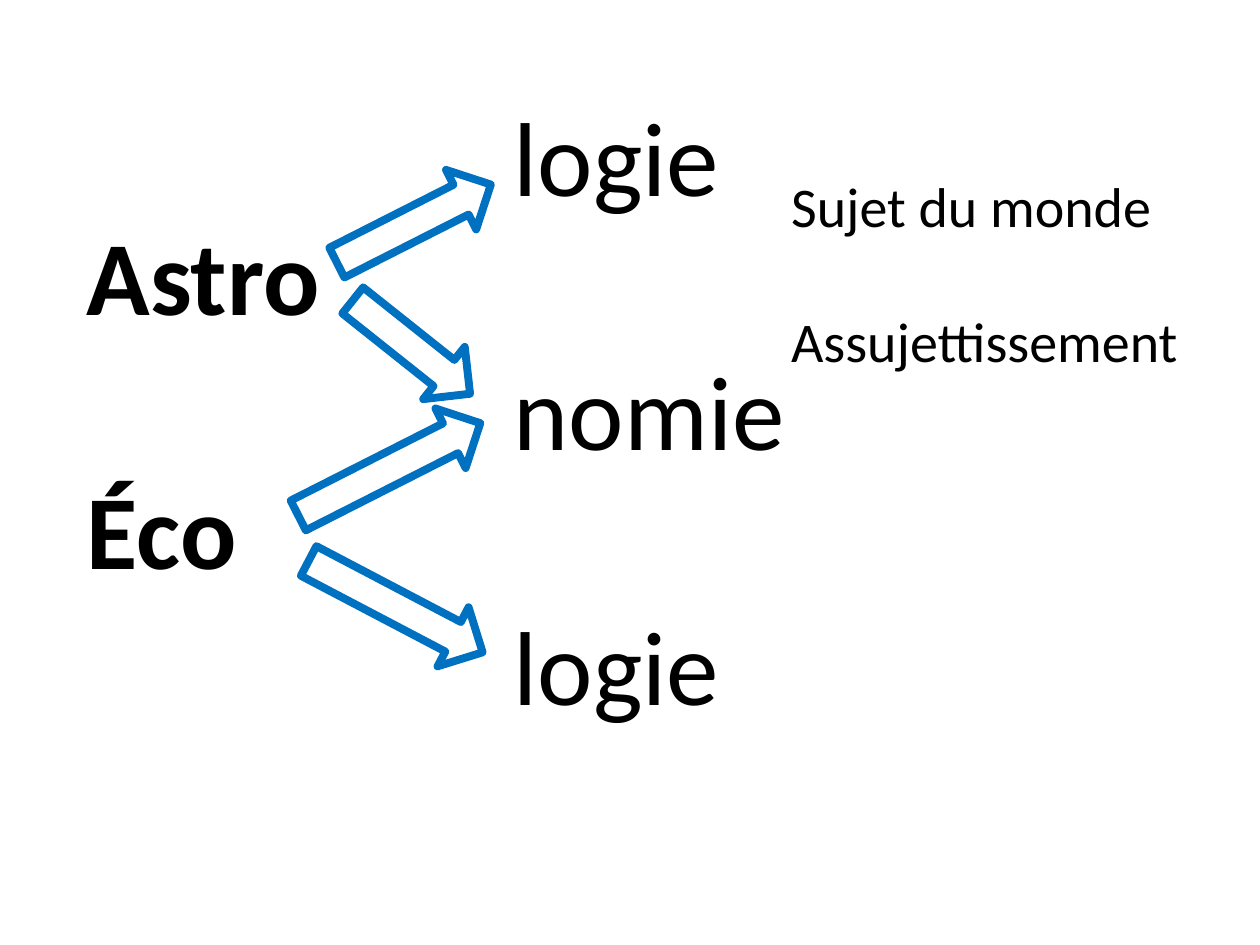
from pptx import Presentation
from pptx.dml.color import RGBColor
from pptx.enum.shapes import MSO_SHAPE
from pptx.enum.text import MSO_AUTO_SIZE
from pptx.util import Inches, Pt

COLORS = {"text": "000000", "arrow": "0070C0"}
LINE_HEIGHT = 1.22  # Calibri line height relative to its size

presentation = Presentation()
presentation.slide_width = Inches(10)
presentation.slide_height = Inches(7.5)
slide = presentation.slides.add_slide(presentation.slide_layouts[6])

# left, top, width, height, size, bold, words
word_columns = [
    (0.59, 1.62, 2.2, 3.13, 60, True, ["Astro", "Éco"]),
    (3.98, 0.68, 3.7, 5.15, 60, False, ["logie", "nomie", "logie"]),
    (6.18, 1.31, 3.82, 1.72, 32, False, ["Sujet du monde", "Assujettissement"]),
]
for left, top, width, height, size, bold, words in word_columns:
    text_box = slide.shapes.add_textbox(
        Inches(left), Inches(top), Inches(width), Inches(height))
    frame = text_box.text_frame
    frame.word_wrap = True
    frame.auto_size = MSO_AUTO_SIZE.SHAPE_TO_FIT_TEXT
    frame.text = "\n".join(words)
    for index, paragraph in enumerate(frame.paragraphs):
        if index:
            paragraph.space_before = Pt(size * LINE_HEIGHT)  # one empty line
        paragraph.font.name = "Calibri"
        paragraph.font.size = Pt(size)
        paragraph.font.bold = bold
        paragraph.font.color.rgb = RGBColor.from_string(COLORS["text"])

# left, top, width, rotation
arrows = [
    (2.6, 1.51, 1.37, 333.1),
    (2.67, 2.49, 1.19, 38.5),
    (2.36, 4.55, 1.56, 27.7),
    (2.28, 3.46, 1.62, 333.1),
]
for left, top, width, rotation in arrows:
    arrow = slide.shapes.add_shape(
        MSO_SHAPE.RIGHT_ARROW, Inches(left), Inches(top), Inches(width), Inches(0.53))
    arrow.rotation = rotation
    arrow.shadow.inherit = False
    arrow.fill.background()
    arrow.line.color.rgb = RGBColor.from_string(COLORS["arrow"])
    arrow.line.width = Pt(4.5)

presentation.save("out.pptx")
